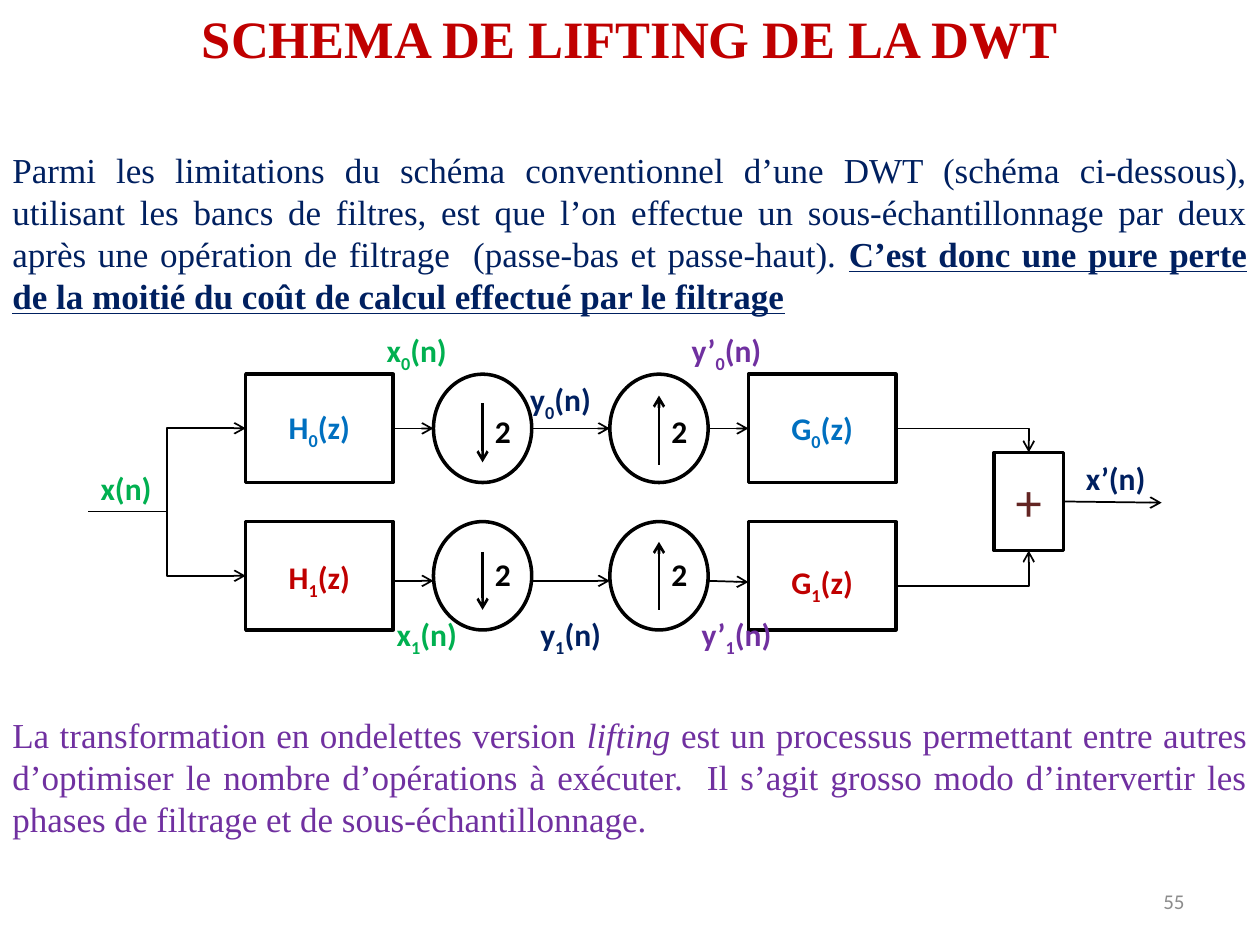
from typing import NamedTuple

import pptx
import pptx.util
from lxml import etree
from pptx.dml.color import RGBColor
from pptx.enum.shapes import MSO_CONNECTOR, MSO_SHAPE
from pptx.enum.text import MSO_ANCHOR, MSO_AUTO_SIZE, PP_ALIGN
from pptx.oxml.ns import qn
from pptx.util import Inches

BLACK = RGBColor(0x00, 0x00, 0x00)
GRAY = RGBColor(0x8C, 0x8C, 0x8C)
RED = RGBColor(0xC0, 0x00, 0x00)
NAVY = RGBColor(0x00, 0x20, 0x60)
BLUE = RGBColor(0x00, 0x70, 0xC0)
GREEN = RGBColor(0x00, 0xB0, 0x50)
PURPLE = RGBColor(0x70, 0x30, 0xA0)
BROWN = RGBColor(0x63, 0x25, 0x23)
SERIF, SANS = "Times New Roman", "Calibri"

FILTER_W, SAMPLER_W, BLOCK_H = 1.17, 0.78, 0.86
ANALYSIS_X, DOWN_X, UP_X, SYNTHESIS_X = 1.95, 3.44, 4.84, 5.94
ADDER_X, ADDER_Y, ADDER_W, ADDER_H = 7.89, 3.59, 0.55, 0.78
INPUT_X, INPUT_Y = 0.7, 4.06
TOP_ROW, BOTTOM_ROW = 2.97, 4.14
LABEL_H = 0.4


class Run(NamedTuple):
    text: str
    bold: bool = False
    italic: bool = False
    underline: bool = False
    subscript: bool = False


class Label(NamedTuple):
    x: float
    y: float
    w: float
    base: str
    index: str
    argument: str
    color: RGBColor
    align: PP_ALIGN = PP_ALIGN.LEFT


class Arrow(NamedTuple):
    x1: float
    y1: float
    x2: float
    y2: float
    weight: float = 1


def add_text(s, x: float, y: float, w: float, h: float, runs: list[Run], size: float,
             color: RGBColor, font: str = SANS, align: PP_ALIGN = PP_ALIGN.LEFT):
    sp = s.shapes.add_textbox(Inches(x), Inches(y), Inches(w), Inches(h))
    tf = sp.text_frame
    tf.word_wrap = True
    tf.auto_size = MSO_AUTO_SIZE.SHAPE_TO_FIT_TEXT
    p = tf.paragraphs[0]
    p.alignment = align
    for run in runs:
        r = p.add_run()
        r.text = run.text
        r.font.name = font
        r.font.size = pptx.util.Pt(size)
        r.font.color.rgb = color
        r.font.bold = run.bold
        r.font.italic = run.italic
        r.font.underline = run.underline
        if run.subscript:
            r.font._element.set("baseline", "-25000")
    return sp


def add_label(s, label: Label) -> None:
    runs = [Run(label.base, bold=True)]
    if label.index:
        runs.append(Run(label.index, bold=True, subscript=True))
    if label.argument:
        runs.append(Run(label.argument, bold=True))
    add_text(s, label.x, label.y, label.w, LABEL_H, runs, 18, label.color, align=label.align)


def add_block(s, kind: MSO_SHAPE, x: float, y: float, w: float, h: float = BLOCK_H):
    sp = s.shapes.add_shape(kind, Inches(x), Inches(y), Inches(w), Inches(h))
    sp.shadow.inherit = False
    sp.fill.background()
    sp.line.color.rgb = BLACK
    sp.line.width = pptx.util.Pt(2)
    return sp


def add_arrow(s, arrow: Arrow, kind: MSO_CONNECTOR = MSO_CONNECTOR.STRAIGHT):
    cx = s.shapes.add_connector(kind, Inches(arrow.x1), Inches(arrow.y1),
                                Inches(arrow.x2), Inches(arrow.y2))
    cx.line.color.rgb = BLACK
    cx.line.width = pptx.util.Pt(arrow.weight)
    etree.SubElement(cx.line._get_or_add_ln(), qn("a:tailEnd"), type="arrow")
    etree.SubElement(cx._element.spPr, qn("a:effectLst"))
    return cx


def add_corner_arrow(s, arrow: Arrow) -> None:
    """Draw an arrow with a single bend: across first, then up or down."""
    cx = add_arrow(s, arrow, MSO_CONNECTOR.ELBOW)
    cx._element.spPr.find(qn("a:prstGeom")).set("prst", "bentConnector2")


def add_filter_bank(s) -> None:
    analysis, synthesis = [], []
    for y in (TOP_ROW, BOTTOM_ROW):
        analysis.append(add_block(s, MSO_SHAPE.RECTANGLE, ANALYSIS_X, y, FILTER_W))
        synthesis.append(add_block(s, MSO_SHAPE.RECTANGLE, SYNTHESIS_X, y, FILTER_W))
        for x in (DOWN_X, UP_X):
            add_block(s, MSO_SHAPE.OVAL, x, y, SAMPLER_W)
        add_arrow(s, Arrow(INPUT_X, INPUT_Y, ANALYSIS_X, y + BLOCK_H / 2), MSO_CONNECTOR.ELBOW)
    adder = add_block(s, MSO_SHAPE.RECTANGLE, ADDER_X, ADDER_Y, ADDER_W, ADDER_H)

    down_mid, up_mid = DOWN_X + SAMPLER_W / 2, UP_X + SAMPLER_W / 2
    for arrow in (
        Arrow(down_mid, 3.2, down_mid, 3.67, 1.5),
        Arrow(down_mid, 4.38, down_mid, 4.84, 1.5),
        Arrow(up_mid, 3.69, up_mid, 3.14, 1.5),
        Arrow(up_mid, 4.84, up_mid, 4.3, 1.5),
    ):
        add_arrow(s, arrow)

    for y in (3.4, 4.61):
        first = add_arrow(s, Arrow(ANALYSIS_X + FILTER_W, y, DOWN_X, y))
        add_arrow(s, Arrow(DOWN_X + SAMPLER_W, y, UP_X, y))
        last = add_arrow(s, Arrow(UP_X + SAMPLER_W, y, SYNTHESIS_X, y + 0.01))
        if y == 3.4:
            first.begin_connect(analysis[0], 3)
            last.end_connect(synthesis[0], 1)

    adder_mid, synthesis_end = ADDER_X + ADDER_W / 2, SYNTHESIS_X + FILTER_W
    add_corner_arrow(s, Arrow(synthesis_end, 3.4, adder_mid, ADDER_Y))
    add_corner_arrow(s, Arrow(synthesis_end, 4.65, adder_mid, ADDER_Y + ADDER_H))
    output = add_arrow(s, Arrow(ADDER_X + ADDER_W, 3.98, 9.22, 3.99))
    output.begin_connect(adder, 3)

    center = PP_ALIGN.CENTER
    for label in (
        Label(ANALYSIS_X, 3.19, FILTER_W, "H", "0", "(z)", BLUE, center),
        Label(ANALYSIS_X, 4.38, FILTER_W, "H", "1", "(z)", RED, center),
        Label(SYNTHESIS_X, 3.2, FILTER_W, "G", "0", "(z)", BLUE, center),
        Label(SYNTHESIS_X, 4.42, FILTER_W, "G", "1", "(z)", RED, center),
        *(Label(x, y, 0.47, "2", "", "", BLACK)
          for y in (3.22, 4.36) for x in (down_mid, up_mid)),
        Label(INPUT_X, 3.67, 0.7, "x(n)", "", "", GREEN),
        Label(8.52, 3.59, 0.7, "x’(n)", "", "", NAVY),
        Label(2.97, 2.58, 0.7, "x", "0", "(n)", GREEN),
        Label(3.05, 4.83, 0.7, "x", "1", "(n)", GREEN),
        Label(4.11, 2.97, 0.7, "y", "0", "(n)", NAVY),
        Label(4.19, 4.83, 0.7, "y", "1", "(n)", NAVY),
        Label(5.39, 2.58, 0.86, "y’", "0", "(n)", PURPLE),
        Label(5.47, 4.83, 0.78, "y’", "1", "(n)", PURPLE),
    ):
        add_label(s, label)
    add_text(s, ADDER_X, 3.67, ADDER_W, 0.61, [Run("+")], 30, BROWN, align=center)


def main() -> None:
    prs = pptx.Presentation()
    prs.slide_width, prs.slide_height = Inches(10), Inches(7.5)
    s = prs.slides.add_slide(prs.slide_layouts[6])

    number = add_text(s, 7.17, 6.95, 2.33, 0.4, [Run("55")], 12, GRAY, align=PP_ALIGN.RIGHT)
    number.text_frame.auto_size = MSO_AUTO_SIZE.NONE
    number.text_frame.vertical_anchor = MSO_ANCHOR.MIDDLE

    add_text(s, 0, 0, 10, 0.61, [Run("SCHEMA DE LIFTING DE LA DWT", bold=True)],
             30, RED, SERIF, PP_ALIGN.CENTER)
    add_text(s, 0, 1.13, 10, 1.45, [
        Run("Parmi les limitations du schéma conventionnel d’une DWT (schéma ci-dessous), "
            "utilisant les bancs de filtres, est que l’on effectue un sous-échantillonnage "
            "par deux après une opération de filtrage  (passe-bas et passe-haut). "),
        Run("C’est donc une pure perte de la moitié du coût de calcul effectué par le filtrage",
            bold=True, underline=True),
    ], 20, NAVY, SERIF, PP_ALIGN.JUSTIFY)
    add_filter_bank(s)
    add_text(s, 0, 5.61, 10, 1.11, [
        Run("La transformation en ondelettes version "),
        Run("lifting", italic=True),
        Run(" est un processus permettant entre autres d’optimiser le nombre d’opérations "
            "à exécuter.  Il s’agit grosso modo d’intervertir les phases de filtrage et de "
            "sous-échantillonnage."),
    ], 20, PURPLE, SERIF, PP_ALIGN.JUSTIFY)

    prs.save("out.pptx")


if __name__ == "__main__":
    main()
